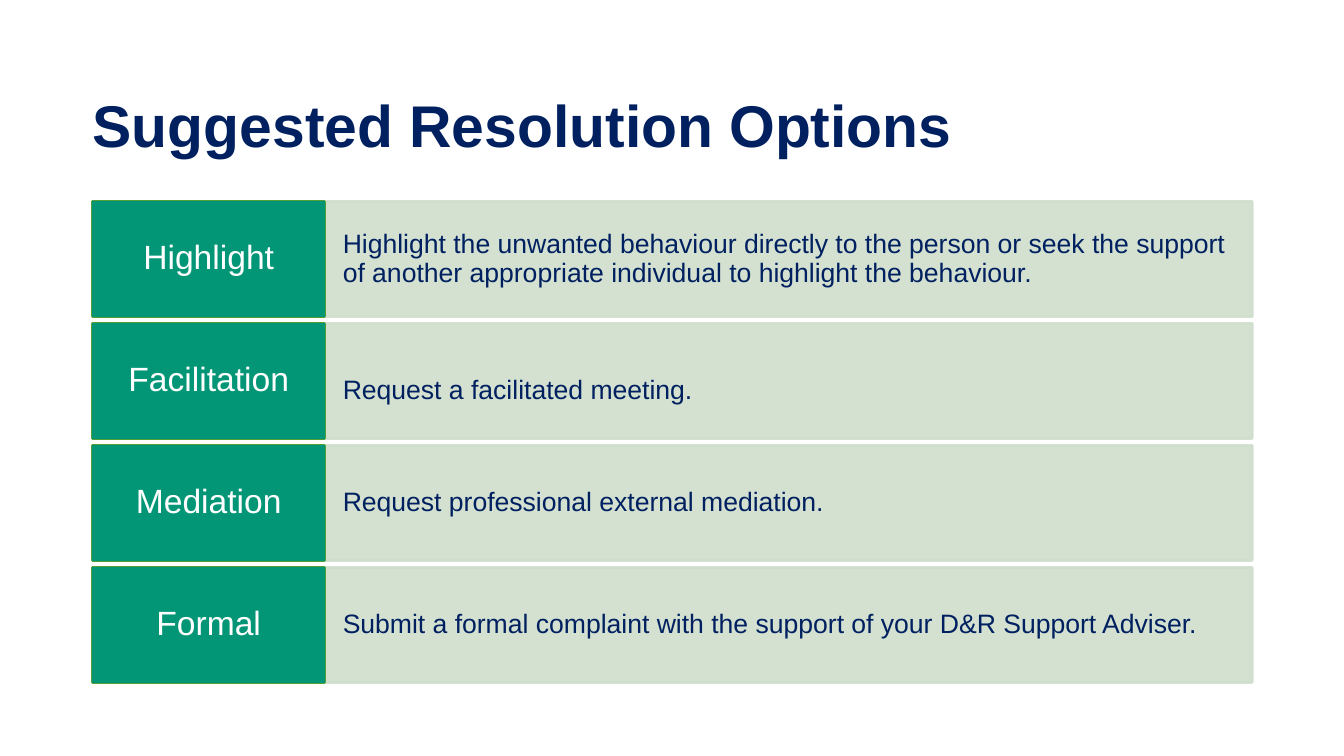
from lxml import etree
from pptx import Presentation
from pptx.dml.color import RGBColor
from pptx.enum.shapes import MSO_SHAPE
from pptx.enum.text import MSO_ANCHOR, PP_ALIGN
from pptx.oxml.ns import qn
from pptx.util import Inches, Pt

RECT = MSO_SHAPE.RECTANGLE
MIDDLE = MSO_ANCHOR.MIDDLE
LEFT, CENTER = PP_ALIGN.LEFT, PP_ALIGN.CENTER

COLORS = {
    "navy": "002060",
    "teal": "029676",
    "green": "539E36",
    "sage": "CFDECC",
    "white": "FFFFFF",
}

OPTIONS = [
    ("Highlight", "Highlight the unwanted behaviour directly to the person or seek "
                  "the support of another appropriate individual to highlight the "
                  "behaviour.", 0),
    ("Facilitation", "Request a facilitated meeting.", 0.08),
    ("Mediation", "Request professional external mediation.", 0),
    ("Formal", "Submit a formal complaint with the support of your D&R Support "
               "Adviser.", 0),
]


class Board:
    font = "Arial"
    left, top = 0.92, 2
    col, row, height = 2.3, 1.21, 1.14

    def __init__(self, deck):
        self.slide = deck.slides.add_slide(deck.slide_layouts[5])

    def color(self, name):
        return RGBColor.from_string(COLORS[name])

    def cell(self, col, row, span):
        return (Inches(self.left + col * self.col), Inches(self.top + row * self.row),
                Inches(span * self.col), Inches(self.height))

    def label(self, shape, text, size, color, align=LEFT, inset=(0, 0), bold=False):
        frame = shape.text_frame
        frame.word_wrap = True
        frame.vertical_anchor = MIDDLE
        frame.margin_left = frame.margin_right = Inches(inset[0])
        frame.margin_top = frame.margin_bottom = Inches(inset[1])
        para = frame.paragraphs[0]
        para.alignment = align
        para.line_spacing = 0.9
        run = para.add_run()
        run.text = text
        run.font.name = self.font
        run.font.size = Pt(size)
        run.font.bold = bold
        run.font.color.rgb = self.color(color)

    def title(self, text):
        shape = self.slide.shapes.title
        shape.left, shape.top = Inches(self.left), Inches(0.55)
        shape.width, shape.height = Inches(5 * self.col), Inches(1.45)
        self.label(shape, text, 42, "navy", bold=True)

    def block(self, col, row, span, color, weight, alpha=None):
        shape = self.slide.shapes.add_shape(RECT, *self.cell(col, row, span))
        shape.shadow.inherit = False
        shape.fill.solid()
        shape.fill.fore_color.rgb = self.color(color)
        shape.line.color.rgb = self.color(color)
        shape.line.width = Pt(weight)
        if alpha:
            for tint in shape._element.spPr.iter(qn("a:srgbClr")):
                etree.SubElement(tint, qn("a:alpha")).set("val", str(alpha * 1000))
        return shape

    def note(self, col, row, span, text):
        shape = self.slide.shapes.add_textbox(*self.cell(col, row, span))
        self.label(shape, text, 19, "navy", inset=(0.18, 0.29))

    def option(self, row, name, text, shift):
        self.block(1, row, 4, "sage", 2, alpha=89)
        self.note(1, row + shift, 4, text)
        self.block(0, row, 1, "green", 2)
        head = self.block(0, row, 1, "teal", 0.75)
        self.label(head, name, 24, "white", CENTER, (0.12, 0.11))


def main():
    deck = Presentation()
    deck.slide_width, deck.slide_height = Inches(13.33), Inches(7.5)
    board = Board(deck)
    board.title("Suggested Resolution Options")
    for row, (name, text, shift) in enumerate(OPTIONS):
        board.option(row, name, text, shift)
    deck.save("out.pptx")


if __name__ == "__main__":
    main()
